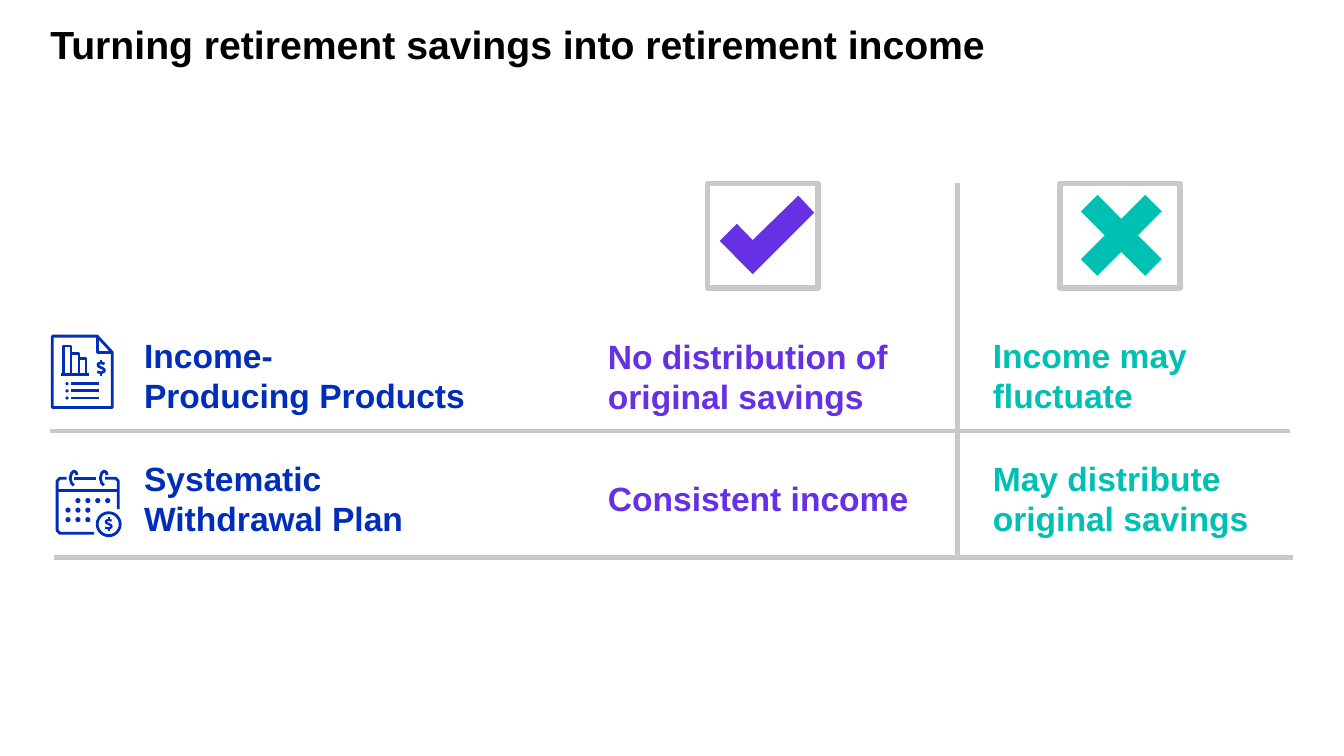
import pptx
import pptx.dml.color
import pptx.enum.shapes
import pptx.enum.text
import pptx.util
from lxml import etree

Cm = pptx.util.Cm
Pt = pptx.util.Pt
SHAPES = pptx.enum.shapes.MSO_SHAPE


def rgb(value):
    return pptx.dml.color.RGBColor.from_string(value)


class Board:
    font = "Arial"
    black = "000000"
    white = "FFFFFF"
    blue = "002EB8"
    purple = "6730E3"
    teal = "00BFB3"
    gray = "C9C9C9"
    icon_stroke = 2

    def __init__(self, slide):
        self.shapes = slide.shapes

    def paint(self, shape, fill=None, line=None, weight=None):
        shape.shadow.inherit = False
        if fill:
            shape.fill.solid()
            shape.fill.fore_color.rgb = rgb(fill)
        else:
            shape.fill.background()
        if line:
            shape.line.color.rgb = rgb(line)
            shape.line.width = Pt(weight)
        else:
            shape.line.fill.background()
        return shape

    def text(self, words, left, top, width, height, color, size=24):
        box = self.shapes.add_textbox(Cm(left), Cm(top), Cm(width), Cm(height))
        frame = box.text_frame
        frame.word_wrap = True
        frame.auto_size = pptx.enum.text.MSO_AUTO_SIZE.SHAPE_TO_FIT_TEXT
        frame.margin_left = frame.margin_right = 0
        frame.margin_top = frame.margin_bottom = 0
        paragraph = frame.paragraphs[0]
        paragraph.text = words
        paragraph.font.name = self.font
        paragraph.font.size = Pt(size)
        paragraph.font.bold = True
        paragraph.font.color.rgb = rgb(color)

    def shape(self, kind, left, top, width, height, **paint):
        shape = self.shapes.add_shape(kind, Cm(left), Cm(top), Cm(width), Cm(height))
        return self.paint(shape, **paint)

    def rule(self, x1, y1, x2, y2, color, weight):
        rule = self.shapes.add_connector(
            pptx.enum.shapes.MSO_CONNECTOR.STRAIGHT, Cm(x1), Cm(y1), Cm(x2), Cm(y2))
        rule.line.color.rgb = rgb(color)
        rule.line.width = Pt(weight)
        properties = rule._element.spPr
        etree.SubElement(properties, pptx.oxml.ns.qn("a:effectLst"))

    def outline(self, contours, closed=False, **paint):
        points = [[(Cm(x), Cm(y)) for x, y in contour] for contour in contours]
        builder = self.shapes.build_freeform(*points[0][0])
        for index, contour in enumerate(points):
            if index:
                builder.move_to(*contour[0])
            builder.add_line_segments(contour[1:], close=closed)
        self.paint(builder.convert_to_shape(), **paint)

    def stroke(self, *contours):
        self.outline(contours, line=self.blue, weight=self.icon_stroke)

    def dot(self, left, top, size):
        self.shape(SHAPES.OVAL, left, top, size, size, fill=self.blue)

    def dollar(self, x, y, height):
        curve = [(0.2, -0.24), (0, -0.31), (-0.19, -0.24), (-0.18, -0.1),
                 (0.17, 0.07), (0.2, 0.2), (0.02, 0.3), (-0.24, 0.24)]
        marks = [curve, [(0, -0.5), (0, -0.31)], [(0, 0.3), (0, 0.5)]]
        contours = [[(x + dx * height, y + dy * height) for dx, dy in mark] for mark in marks]
        self.outline(contours, line=self.blue, weight=4.5 * height)

    def report_icon(self):
        self.stroke([(1.32, 8.47), (2.45, 8.47), (2.83, 8.88), (2.83, 10.27),
                     (1.32, 10.27), (1.32, 8.47)],
                    [(2.45, 8.47), (2.45, 8.88), (2.83, 8.88)])
        base = 9.44
        self.stroke([(1.54, base), (2.25, base)],
                    [(1.6, base), (1.6, 8.72), (1.79, 8.72), (1.79, base)],
                    [(1.79, 8.9), (1.99, 8.9), (1.99, base)],
                    [(1.99, 9.03), (2.17, 9.03), (2.17, base)])
        for row in range(3):
            y = 9.67 + 0.18 * row
            self.rule(1.8, y, 2.5, y, self.blue, self.icon_stroke)
            self.dot(1.65, y - 0.04, 0.08)
        self.dollar(2.55, 9.27, 0.42)

    def calendar_icon(self):
        self.stroke([(1.68, 12.05), (1.51, 12.05), (1.44, 12.12), (1.44, 13.37),
                     (1.51, 13.44), (2.37, 13.44)],
                    [(1.87, 12.05), (2.42, 12.05)],
                    [(2.65, 12.05), (2.91, 12.05), (2.98, 12.12), (2.98, 12.83)],
                    [(1.44, 12.36), (2.98, 12.36)])
        hook = [(1.94, 11.97), (1.92, 11.9), (1.86, 11.87), (1.8, 11.93),
                (1.77, 12.05), (1.8, 12.17), (1.86, 12.23)]
        self.stroke(*[[(x + shift, y) for x, y in hook] for shift in (0, 0.76)])
        for row, columns in enumerate((range(1, 5), range(3), range(3))):
            for column in columns:
                self.dot(1.65 + 0.25 * column, 12.55 + 0.24 * row, 0.13)
        self.shape(SHAPES.OVAL, 2.45, 12.92, 0.58, 0.58,
                   line=self.blue, weight=self.icon_stroke)
        self.dollar(2.74, 13.21, 0.36)


def main():
    deck = pptx.Presentation()
    deck.slide_width = Cm(33.87)
    deck.slide_height = Cm(19.05)
    board = Board(deck.slides.add_slide(deck.slide_layouts[6]))

    board.text("Turning retirement savings into retirement income",
               1.27, 0.51, 24.13, 1.24, board.black, 28)

    divider, header_top, first_row, table_end = 24.13, 4.62, 10.87, 14.1
    for segment in ((1.27, first_row, 32.51, first_row),
                    (1.35, 14.05, 32.59, 14.05),
                    (divider, header_top, divider, first_row),
                    (divider, first_row, divider, table_end)):
        board.rule(*segment, board.gray, 3)

    board.shape(SHAPES.RECTANGLE, 17.83, header_top, 2.79, 2.64,
                fill=board.white, line=board.gray, weight=4)
    board.outline([[(18.97, 6.05), (18.57, 5.64), (18.14, 6.07),
                    (18.97, 6.91), (20.52, 5.36), (20.12, 4.93)]],
                  closed=True, fill=board.purple)
    board.shape(SHAPES.RECTANGLE, 26.72, header_top, 3.02, 2.64,
                line=board.gray, weight=4)
    cross = board.shape(SHAPES.MATH_PLUS, 26.7, 4.37, 3.12, 3.12, fill=board.teal)
    cross.adjustments[0] = 0.189
    cross.rotation = 315

    label_x, benefit_x, drawback_x = 3.63, 15.32, 25.02
    for words, left, top, width, height, color in (
            ("Income-\vProducing Products", label_x, 8.43, 8.84, 2.06, board.blue),
            ("No distribution of original savings", benefit_x, 8.46, 7.8, 2.06, board.purple),
            ("Income may fluctuate", drawback_x, 8.43, 7.34, 2.06, board.teal),
            ("Systematic Withdrawal Plan", label_x, 11.53, 8, 2.06, board.blue),
            ("Consistent income", benefit_x, 12.04, 8.18, 1.02, board.purple),
            ("May distribute original savings", drawback_x, 11.53, 7.62, 2.06, board.teal)):
        board.text(words, left, top, width, height, color)

    board.report_icon()
    board.calendar_icon()
    deck.save("out.pptx")


if __name__ == "__main__":
    main()
